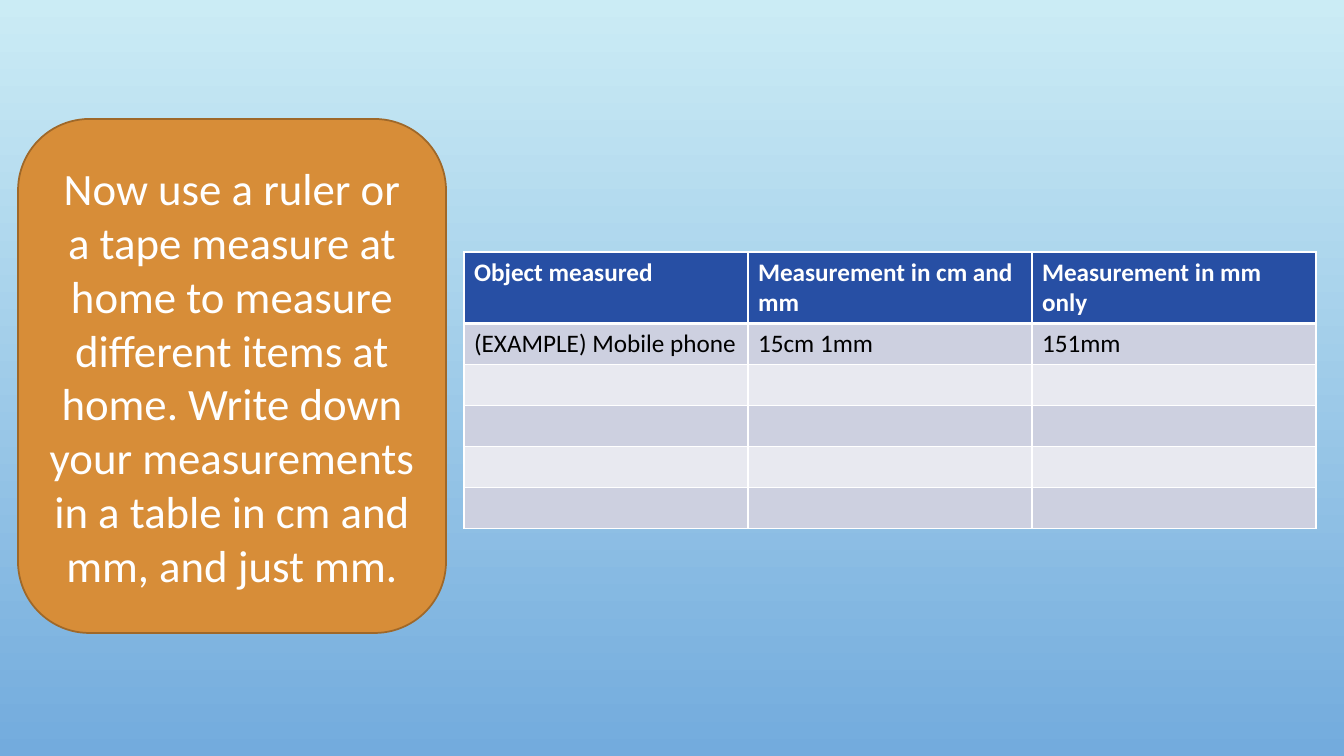
from dataclasses import dataclass

from lxml.etree import SubElement
from pptx import Presentation
from pptx.dml.color import RGBColor
from pptx.enum.shapes import MSO_SHAPE
from pptx.enum.text import MSO_ANCHOR, PP_ALIGN
from pptx.oxml.ns import qn
from pptx.util import Emu, Pt

EMU_PER_PX = 12192000 / 1344


def px(length):
    return Emu(round(length * EMU_PER_PX))


@dataclass(frozen=True)
class Theme:
    font: str = "Calibri"
    sky_top: str = "CBECF5"
    sky_bottom: str = "73ABDD"
    card: str = "D78D38"
    card_line: str = "9F6829"
    header: str = "274FA4"
    bands: tuple = ("CDD0E0", "E8E9F0")
    light: str = "FFFFFF"
    dark: str = "000000"
    card_size: int = 32
    table_size: int = 18
    card_line_width: float = 1.25
    border_width: int = 1
    header_border_width: int = 3


def write_text(text_frame, text, *, font, size, color, bold=False, align=PP_ALIGN.LEFT):
    paragraph = text_frame.paragraphs[0]
    paragraph.alignment = align
    run = paragraph.add_run()
    run.text = text
    run.font.name = font
    run.font.size = Pt(size)
    run.font.bold = bold
    run.font.color.rgb = RGBColor.from_string(color)


class SlideBuilder:
    def __init__(self, slide, theme):
        self.slide = slide
        self.theme = theme

    def background(self):
        fill = self.slide.background.fill
        fill.gradient()
        fill.gradient_angle = 270
        colors = (self.theme.sky_top, self.theme.sky_bottom)
        for position, (stop, color) in enumerate(zip(fill.gradient_stops, colors)):
            stop.position = position
            stop.color.rgb = RGBColor.from_string(color)

    def card(self, text, left, top, width, height):
        theme = self.theme
        shape = self.slide.shapes.add_shape(
            MSO_SHAPE.ROUNDED_RECTANGLE, px(left), px(top), px(width), px(height))
        shape.shadow.inherit = False
        shape.fill.solid()
        shape.fill.fore_color.rgb = RGBColor.from_string(theme.card)
        shape.line.color.rgb = RGBColor.from_string(theme.card_line)
        shape.line.width = Pt(theme.card_line_width)
        shape.text_frame.word_wrap = True
        shape.text_frame.vertical_anchor = MSO_ANCHOR.MIDDLE
        write_text(shape.text_frame, text, font=theme.font, size=theme.card_size,
                   color=theme.light, align=PP_ALIGN.CENTER)

    def border(self, cell, side, width):
        properties = cell._tc.get_or_add_tcPr()
        line = SubElement(properties, qn(f"a:ln{side}"), w=str(Pt(width)))
        fill = SubElement(line, qn("a:solidFill"))
        SubElement(fill, qn("a:srgbClr"), val=self.theme.light)

    def cell(self, cell, text, row):
        theme = self.theme
        is_header = row == 0
        thick_side = {0: "B", 1: "T"}.get(row)
        for side in "LRTB":
            self.border(cell, side, theme.header_border_width if side == thick_side
                        else theme.border_width)
        cell.fill.solid()
        color = theme.header if is_header else theme.bands[(row - 1) % 2]
        cell.fill.fore_color.rgb = RGBColor.from_string(color)
        if text:
            write_text(cell.text_frame, text, font=theme.font, size=theme.table_size,
                       color=theme.light if is_header else theme.dark, bold=is_header)

    def table(self, rows, left, top, column_width, header_height, row_height):
        columns = len(rows[0])
        height = header_height + row_height * (len(rows) - 1)
        frame = self.slide.shapes.add_table(
            len(rows), columns, px(left), px(top), px(column_width * columns), px(height))
        table = frame.table
        for column in table.columns:
            column.width = px(column_width)
        for row, texts in enumerate(rows):
            table.rows[row].height = px(row_height if row else header_height)
            for column, text in enumerate(texts):
                self.cell(table.cell(row, column), text, row)


def main():
    presentation = Presentation()
    presentation.slide_width = px(1344)
    presentation.slide_height = px(756)
    slide = presentation.slides.add_slide(presentation.slide_layouts[6])
    builder = SlideBuilder(slide, Theme())
    builder.background()
    builder.card(
        "Now use a ruler or a tape measure at home to measure different items at home. "
        "Write down your measurements in a table in cm and mm, and just mm.",
        left=18, top=119, width=428, height=514)
    measurements = [
        ("Object measured", "Measurement in cm and mm", "Measurement in mm only"),
        ("(EXAMPLE) Mobile phone", "15cm 1mm", "151mm"),
    ]
    blank_rows = [("", "", "")] * 4
    builder.table(measurements + blank_rows, left=464, top=252, column_width=284,
                  header_height=71, row_height=41)
    presentation.save("out.pptx")


if __name__ == "__main__":
    main()
